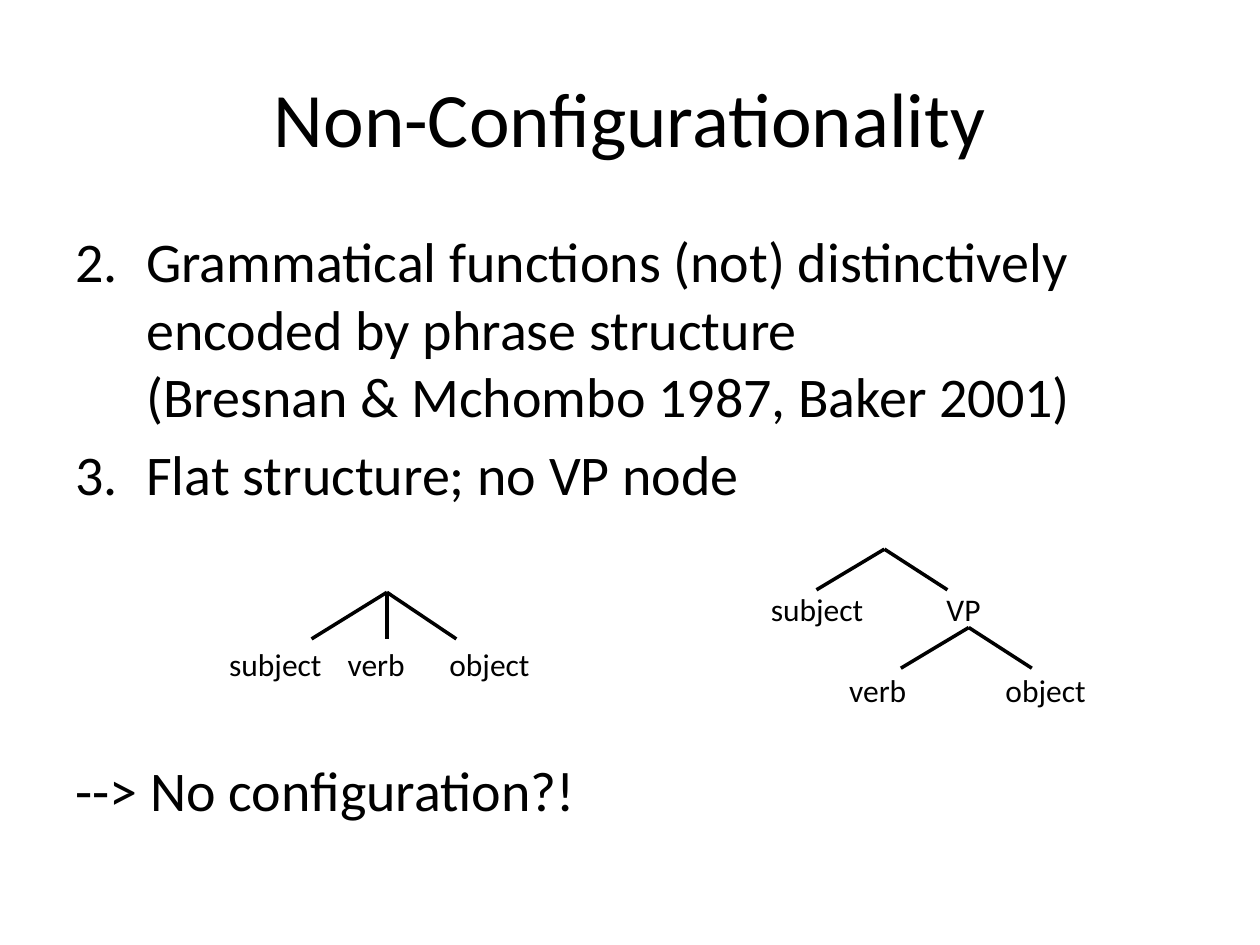
import pptx
import pptx.util
import pptx.dml.color
import pptx.enum.shapes
import pptx.enum.text
import pptx.oxml.ns
from lxml import etree

Cm, Pt = pptx.util.Cm, pptx.util.Pt
ALIGN = pptx.enum.text.PP_ALIGN
ANCHOR = pptx.enum.text.MSO_ANCHOR
COLORS = {"ink": "000000", "back": "FFFFFF"}
FONT = "Calibri"

# Content: lengths in cm, sizes in points
TITLE = "Non-Configurationality"
# lines, first number of the list (or None), space before
BODY = [
    (["Grammatical functions (not) distinctively encoded by phrase structure",
      "(Bresnan & Mchombo 1987, Baker 2001)"], 2, 6.4),
    (["Flat structure; no VP node"], 2, 6.4),
    (["--> No configuration?!"], None, 142),
]
# labels: word, left, top, width, height
# fans: apex, drop, sideways reach of each branch, label above, {branch: label below}
TREES = [
    {"labels": [("verb", 16.87, 13.41, 1.85, 0.89),
                ("VP", 18.83, 11.76, 1.4, 0.89),
                ("subject", 15.29, 11.76, 2.54, 1.02),
                ("object", 20.02, 13.41, 2.34, 0.89)],
     "fans": [((17.83, 11.07), 0.82, (-1.37, 1.27), None, {}),
              ((19.53, 12.65), 0.82, (-1.37, 1.27), "VP", {})]},
    {"labels": [("subject", 4.37, 12.88, 2.59, 1.02),
                ("verb", 6.76, 12.88, 2.08, 1.02),
                ("object", 8.81, 12.88, 2.59, 1.02)],
     "fans": [((7.8, 11.94), 0.94, (0, -1.52, 1.4), None, {0: "verb"})]},
]


def ink(name):
    return pptx.dml.color.RGBColor.from_string(COLORS[name])


def add_box(shapes, left, top, width, height, anchor=ANCHOR.TOP):
    box = shapes.add_textbox(Cm(left), Cm(top), Cm(width), Cm(height))
    box.text_frame.word_wrap = True
    box.text_frame.vertical_anchor = anchor
    return box


def add_run(para, text, size):
    run = para.add_run()
    run.text = text
    run.font.name, run.font.size = FONT, Pt(size)
    run.font.color.rgb = ink("ink")


def set_number(para, start):
    props = para._p.get_or_add_pPr()
    props.set("marL", str(Cm(1.43)))
    props.set("indent", str(-Cm(1.43)))
    etree.SubElement(props, pptx.oxml.ns.qn("a:buFont"), typeface="+mj-lt")
    etree.SubElement(props, pptx.oxml.ns.qn("a:buAutoNum"),
                     type="arabicPeriod", startAt=str(start))


def add_line(shapes, x1, y1, x2, y2):
    line = shapes.add_connector(pptx.enum.shapes.MSO_CONNECTOR.STRAIGHT,
                                Cm(x1), Cm(y1), Cm(x2), Cm(y2))
    line.line.color.rgb = ink("ink")
    line.line.width = Pt(2)
    etree.SubElement(line._element.spPr, pptx.oxml.ns.qn("a:effectLst"))
    return line


def add_tree(slide, tree):
    shapes = slide.shapes.add_group_shape().shapes
    nodes = {}
    for word, *place in tree["labels"]:
        nodes[word] = add_box(shapes, *place)
        add_run(nodes[word].text_frame.paragraphs[0], word, 18)
    for (x, y), drop, reach, head, feet in tree["fans"]:
        for step in reach:
            line = add_line(shapes, x, y, x + step, y + drop)
            if head:
                line.begin_connect(nodes[head], 2)
            if step in feet:
                line.end_connect(nodes[feet[step]], 0)


def main():
    deck = pptx.Presentation()
    deck.slide_width, deck.slide_height = Cm(25.4), Cm(19.05)
    slide = deck.slides.add_slide(deck.slide_layouts[6])
    slide.background.fill.solid()
    slide.background.fill.fore_color.rgb = ink("back")

    # Title
    box = add_box(slide.shapes, 1.27, 0.76, 22.86, 3.18, ANCHOR.MIDDLE)
    para = box.text_frame.paragraphs[0]
    para.alignment = ALIGN.CENTER
    add_run(para, TITLE, 44)

    # Numbered points and conclusion
    frame = add_box(slide.shapes, 1.27, 4.45, 22.86, 12.57).text_frame
    for i, (lines, start, gap) in enumerate(BODY):
        para = frame.add_paragraph() if i else frame.paragraphs[0]
        para.space_before = Pt(gap)
        if start:
            set_number(para, start)
        for j, text in enumerate(lines):
            if j:
                para.add_line_break()
            add_run(para, text, 32)

    # Syntax trees
    for tree in TREES:
        add_tree(slide, tree)

    deck.save("out.pptx")


if __name__ == "__main__":
    main()
